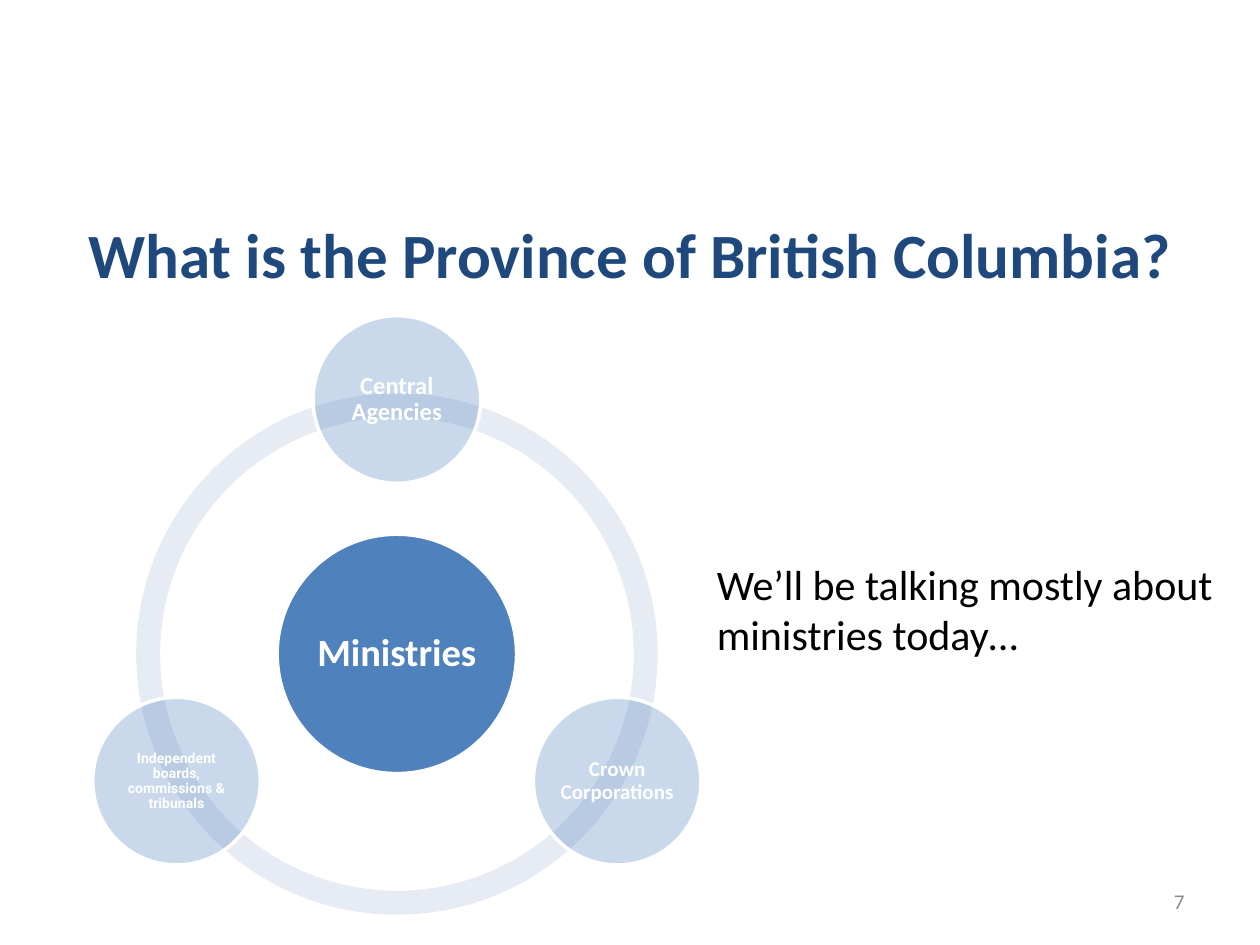
import math

import pptx
import pptx.util
from lxml import etree
from pptx.dml.color import RGBColor
from pptx.enum.shapes import MSO_SHAPE
from pptx.enum.text import MSO_ANCHOR, PP_ALIGN
from pptx.oxml.ns import qn

Pt = pptx.util.Pt


def color(hex_string):
    return RGBColor.from_string(hex_string)


class SlideBuilder:
    navy, blue, pale_blue = "1F497D", "4F81BD", "B2C1DB"
    white, black, gray = "FFFFFF", "000000", "8C8C8C"
    font = "Calibri"

    def __init__(self, slide):
        self.slide = slide

    def set_text(self, shape, text, size, hex_color, bold=False, font=font,
                 align=PP_ALIGN.LEFT, anchor=MSO_ANCHOR.MIDDLE):
        frame = shape.text_frame
        frame.word_wrap = True
        frame.vertical_anchor = anchor
        frame.text = text
        paragraph = frame.paragraphs[0]
        paragraph.alignment = align
        for run in paragraph.runs:
            run.font.name = font
            run.font.size = Pt(size)
            run.font.bold = bold
            run.font.color.rgb = color(hex_color)
        return paragraph

    def text_box(self, left, top, width, height, text, size, hex_color, **style):
        box = self.slide.shapes.add_textbox(Pt(left), Pt(top), Pt(width), Pt(height))
        self.set_text(box, text, size, hex_color, **style)

    def round_shape(self, kind, center, diameter, fill, opacity=100):
        left, top = (value - diameter / 2 for value in center)
        shape = self.slide.shapes.add_shape(
            kind, Pt(left), Pt(top), Pt(diameter), Pt(diameter))
        shape.shadow.inherit = False
        shape.fill.solid()
        shape.fill.fore_color.rgb = color(fill)
        if opacity < 100:
            solid_fill = shape.element.spPr.find(qn("a:solidFill"))
            etree.SubElement(solid_fill[0], qn("a:alpha"), val=str(opacity * 1000))
        return shape

    def arc(self, center, diameter, start, end):
        shape = self.round_shape(MSO_SHAPE.BLOCK_ARC, center, diameter, self.pale_blue, 30)
        shape.line.fill.background()
        # Angles are stored in 60000ths of a degree, adjustments in 100000ths
        shape.adjustments[0] = start * 0.6
        shape.adjustments[1] = end * 0.6
        shape.adjustments[2] = 0.046

    def circle(self, center, diameter, text, size, inset, opacity=100, font=font):
        shape = self.round_shape(MSO_SHAPE.OVAL, center, diameter, self.blue, opacity)
        shape.line.color.rgb = color(self.white)
        shape.line.width = Pt(2)
        frame = shape.text_frame
        frame.margin_left = frame.margin_right = Pt(inset)
        frame.margin_top = frame.margin_bottom = Pt(inset)
        paragraph = self.set_text(shape, text, size, self.white, bold=True, font=font,
                                  align=PP_ALIGN.CENTER)
        paragraph.line_spacing = 0.9


def main():
    presentation = pptx.Presentation()
    presentation.slide_width = Pt(720)
    presentation.slide_height = Pt(540)
    slide = presentation.slides.add_slide(presentation.slide_layouts[6])
    builder = SlideBuilder(slide)

    # Title and slide number
    builder.text_box(36, 111, 648, 68, "What is the Province of British Columbia?", 36,
                     builder.navy, bold=True, align=PP_ALIGN.CENTER)
    builder.text_box(516, 500.5, 168, 29, "7", 12, builder.gray, align=PP_ALIGN.RIGHT)

    # Ring of three arcs
    center = (226.8, 373.7)
    for start, end in ((90, 162), (18, 90), (162, 18)):
        builder.arc(center, 298, start, end)

    # Ministries in the middle, other bodies evenly spaced around them
    builder.circle(center, 136.8, "Ministries", 22, 2.2)
    orbit = 145.4
    bodies = (
        ("Central Agencies", 14, 1.4, "Calibri"),
        ("Crown Corporations", 12, 1.2, "Calibri"),
        ("Independent boards, commissions & tribunals", 8, 0.8, "Roboto"),
    )
    for index, (text, size, inset, font) in enumerate(bodies):
        angle = math.radians(360 / len(bodies) * index - 90)
        body_center = (center[0] + orbit * math.cos(angle),
                       center[1] + orbit * math.sin(angle))
        builder.circle(body_center, 95.8, text, size, inset, opacity=30, font=font)

    # Remark beside the diagram
    builder.text_box(402.5, 315.4, 317.5, 224.6,
                     "We’ll be talking mostly about ministries today…", 24,
                     builder.black, anchor=MSO_ANCHOR.TOP)

    presentation.save("out.pptx")


if __name__ == "__main__":
    main()
